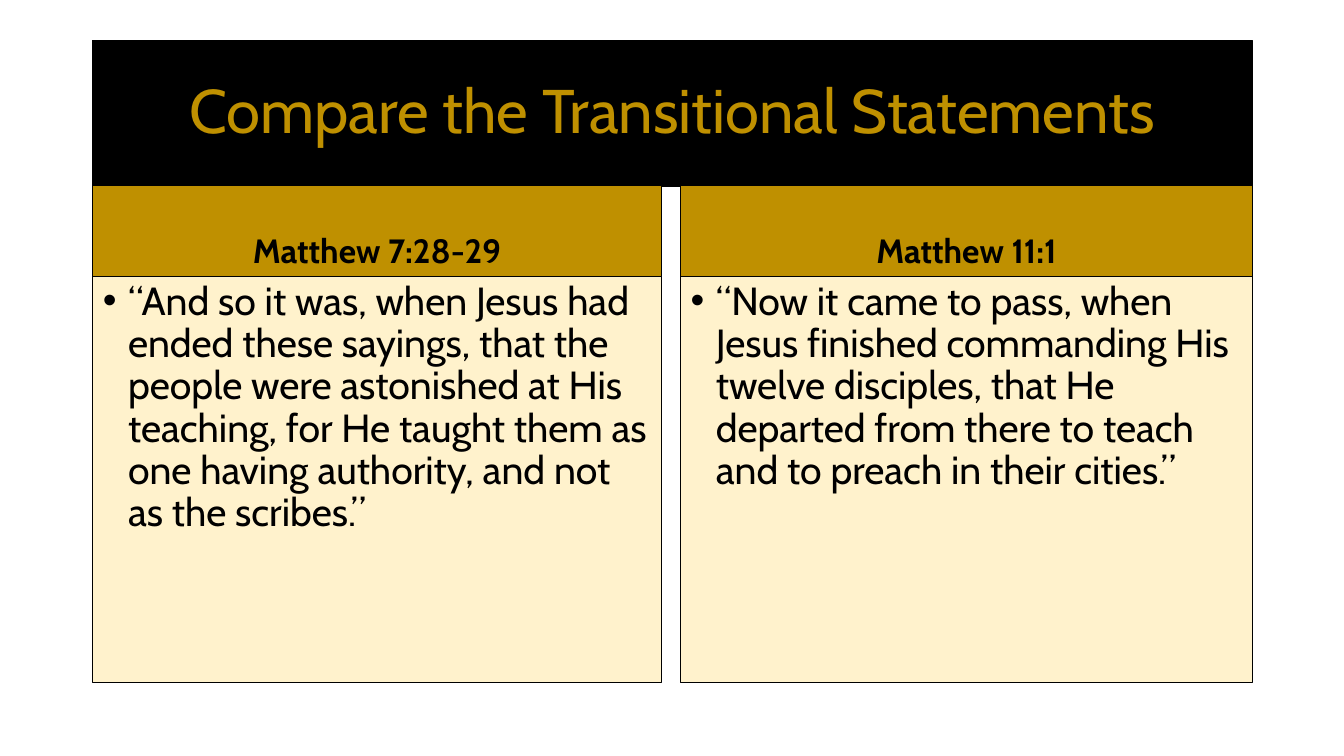
from dataclasses import dataclass

from lxml.etree import SubElement as Sub
from pptx import Presentation
from pptx.dml.color import RGBColor as RGB
from pptx.enum.text import MSO_ANCHOR as Anchor, MSO_AUTO_SIZE as Fit, PP_ALIGN as Align
from pptx.oxml.ns import qn
from pptx.util import Inches, Pt


@dataclass(frozen=True)
class Theme:
    font: str = "Cabin"
    black: str = "000000"
    gold: str = "BF9000"
    cream: str = "FFF2CC"
    title: int = 44
    head: int = 24
    body: int = 28
    line: float = 0.75


def write(frame, text, size, color, font, bold=False, align=Align.LEFT,
          anchor=Anchor.TOP, before=0, bullet=False):
    """Fill a text frame with one formatted paragraph."""
    frame.word_wrap = True
    frame.auto_size = Fit.NONE
    frame.vertical_anchor = anchor
    para = frame.paragraphs[0]
    para.alignment = align
    para.line_spacing = 0.9
    para.space_before = Pt(before)
    run = para.add_run()
    run.text = text
    run.font.name = font
    run.font.size = Pt(size)
    run.font.bold = bold
    run.font.color.rgb = RGB.from_string(color)
    if bullet:
        props = para._p.get_or_add_pPr()
        props.set("marL", str(Inches(0.25)))
        props.set("indent", str(-Inches(0.25)))
        Sub(props, qn("a:buFont"), typeface="Arial")
        Sub(props, qn("a:buChar"), char="•")


class Board:
    """Holds the theme and the current slide."""

    def __init__(self, slide, theme):
        self.slide = slide
        self.theme = theme

    def panel(self, idx, box, fill):
        shape = self.slide.placeholders[idx]
        shape.left, shape.top, shape.width, shape.height = map(Inches, box)
        shape.fill.solid()
        shape.fill.fore_color.rgb = RGB.from_string(fill)
        shape.line.color.rgb = RGB.from_string(self.theme.black)
        shape.line.width = Pt(self.theme.line)
        return shape.text_frame

    def title(self, text, box):
        look = self.theme
        write(self.panel(0, box, look.black), text, look.title, look.gold,
              look.font, align=Align.CENTER, anchor=Anchor.MIDDLE)

    def head(self, idx, text, box):
        look = self.theme
        write(self.panel(idx, box, look.gold), text, look.head, look.black,
              look.font, bold=True, align=Align.CENTER, anchor=Anchor.BOTTOM,
              before=10)

    def body(self, idx, text, box):
        look = self.theme
        write(self.panel(idx, box, look.cream), text, look.body, look.black,
              look.font, before=10, bullet=True)


def main():
    deck = Presentation()
    deck.slide_width, deck.slide_height = Inches(13.33), Inches(7.5)
    # Comparison layout: title, then a heading and a list per column
    board = Board(deck.slides.add_slide(deck.slide_layouts[4]), Theme())

    # Title band
    board.title("Compare the Transitional Statements", (0.92, 0.4, 11.5, 1.45))

    # Two columns of verses
    verses = [
        (0.92, 5.64, "Matthew 7:28-29",
         "“And so it was, when Jesus had ended these sayings, that the people "
         "were astonished at His teaching, for He taught them as one having "
         "authority, and not as the scribes.”"),
        (6.75, 5.67, "Matthew 11:1",
         "“Now it came to pass, when Jesus finished commanding His twelve "
         "disciples, that He departed from there to teach and to preach in "
         "their cities.”"),
    ]
    top, high = 1.84, 0.9
    for col, (left, width, name, quote) in enumerate(verses):
        idx = 1 + 2 * col
        board.head(idx, name, (left, top, width, high))
        board.body(idx + 1, quote, (left, top + high, width, 4.03))

    deck.save("out.pptx")


if __name__ == "__main__":
    main()
